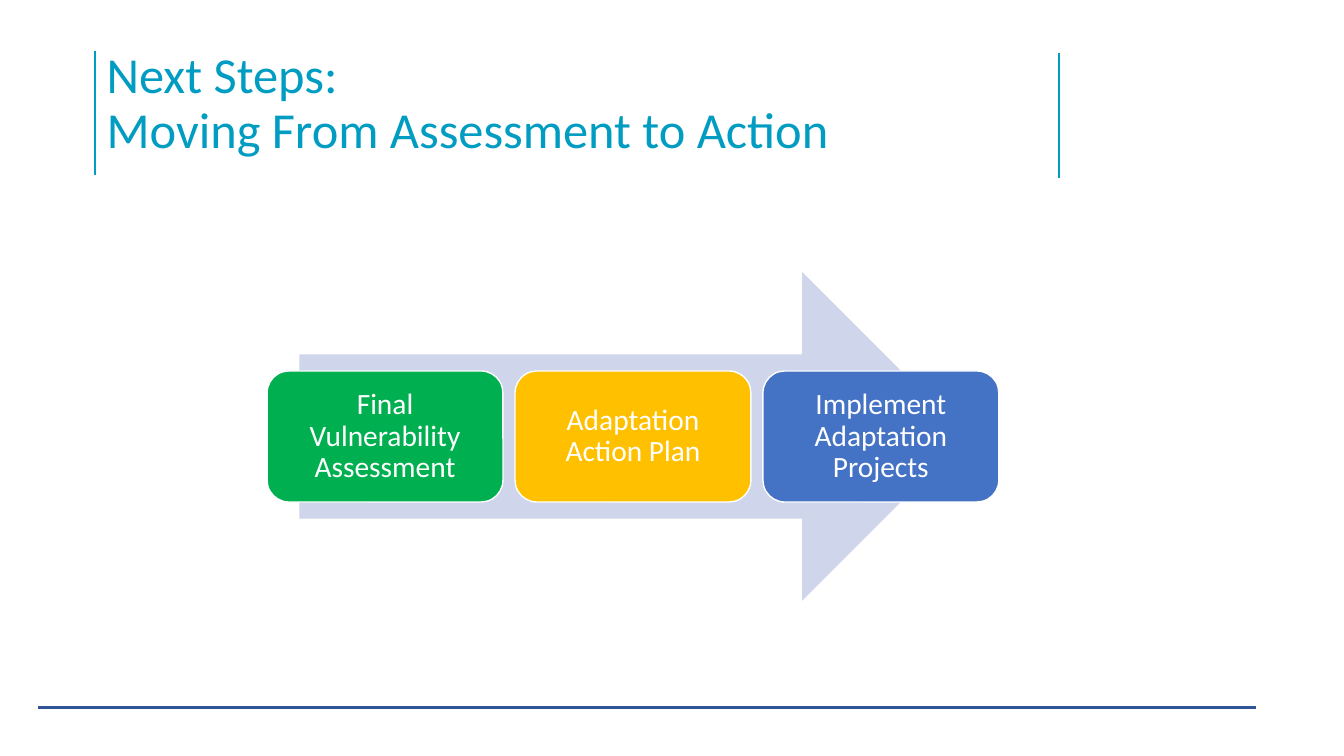
from dataclasses import dataclass

from lxml import etree
from pptx import Presentation
from pptx.dml.color import RGBColor
from pptx.enum import shapes, text
from pptx.oxml import ns
from pptx.shapes.autoshape import Shape
from pptx.slide import Slide
from pptx.util import Pt


@dataclass(frozen=True)
class Theme:
    font: str = "Calibri"
    title_size: float = 36
    step_size: float = 21
    teal: str = "009CC2"
    navy: str = "2F5597"
    pale_blue: str = "CFD5EA"
    green: str = "00B050"
    amber: str = "FFC000"
    blue: str = "4472C4"
    white: str = "FFFFFF"


@dataclass(frozen=True)
class Rule:
    x1: float
    y1: float
    x2: float
    y2: float
    color: str


@dataclass(frozen=True)
class Step:
    label: str
    color: str


THEME = Theme()
RULES = [
    Rule(67.7, 125.3, 67.7, 36.7, THEME.teal),
    Rule(756.7, 127.4, 756.7, 38.2, THEME.teal),
    Rule(27.4, 505.4, 897.1, 505.4, THEME.navy),
]
STEPS = [
    Step("Final Vulnerability Assessment", THEME.green),
    Step("Adaptation Action Plan", THEME.amber),
    Step("Implement Adaptation Projects", THEME.blue),
]
STEP_LEFT, STEP_TOP = 190.8, 265
STEP_WIDTH, STEP_HEIGHT = 168.5, 93.6
STEP_PITCH = 177.1


def draw_rule(slide: Slide, rule: Rule) -> None:
    line = slide.shapes.add_connector(
        shapes.MSO_CONNECTOR.STRAIGHT,
        Pt(rule.x1), Pt(rule.y1), Pt(rule.x2), Pt(rule.y2))
    line.line.color.rgb = RGBColor.from_string(rule.color)
    line.line.width = Pt(1.5)
    etree.SubElement(line._element.spPr, ns.qn("a:effectLst"))


def write(box: Shape, content: str, size: float, color: str,
          align: text.PP_ALIGN, anchor: text.MSO_ANCHOR) -> None:
    frame = box.text_frame
    frame.word_wrap = True
    frame.vertical_anchor = anchor
    paragraph = frame.paragraphs[0]
    paragraph.text = content
    paragraph.alignment = align
    paragraph.line_spacing = 0.9
    paragraph.font.name = THEME.font
    paragraph.font.size = Pt(size)
    paragraph.font.color.rgb = RGBColor.from_string(color)


def draw_title(slide: Slide) -> None:
    title = slide.shapes.add_textbox(Pt(69.1), Pt(28.8), Pt(686.9), Pt(132.5))
    title.text_frame.margin_top = Pt(7)
    write(title, "Next Steps:\vMoving From Assessment to Action",
          THEME.title_size, THEME.teal,
          text.PP_ALIGN.LEFT, text.MSO_ANCHOR.TOP)


def draw_arrow(slide: Slide) -> None:
    arrow = slide.shapes.add_shape(
        shapes.MSO_SHAPE.RIGHT_ARROW,
        Pt(213.8), Pt(194.4), Pt(476.6), Pt(234.7))
    arrow.shadow.inherit = False
    arrow.fill.solid()
    arrow.fill.fore_color.rgb = RGBColor.from_string(THEME.pale_blue)
    arrow.line.fill.background()


def draw_step(slide: Slide, index: int, step: Step) -> None:
    box = slide.shapes.add_shape(
        shapes.MSO_SHAPE.ROUNDED_RECTANGLE,
        Pt(STEP_LEFT + index * STEP_PITCH), Pt(STEP_TOP),
        Pt(STEP_WIDTH), Pt(STEP_HEIGHT))
    box.shadow.inherit = False
    box.fill.solid()
    box.fill.fore_color.rgb = RGBColor.from_string(step.color)
    box.line.color.rgb = RGBColor.from_string(THEME.white)
    box.line.width = Pt(1)
    frame = box.text_frame
    frame.margin_left = frame.margin_right = Pt(6.5)
    frame.margin_top = frame.margin_bottom = Pt(6.5)
    write(box, step.label, THEME.step_size, THEME.white,
          text.PP_ALIGN.CENTER, text.MSO_ANCHOR.MIDDLE)


def main() -> None:
    deck = Presentation()
    deck.slide_width, deck.slide_height = Pt(960), Pt(540)
    slide = deck.slides.add_slide(deck.slide_layouts[6])
    for rule in RULES:
        draw_rule(slide, rule)
    draw_title(slide)
    draw_arrow(slide)
    for index, step in enumerate(STEPS):
        draw_step(slide, index, step)
    deck.save("out.pptx")


if __name__ == "__main__":
    main()
